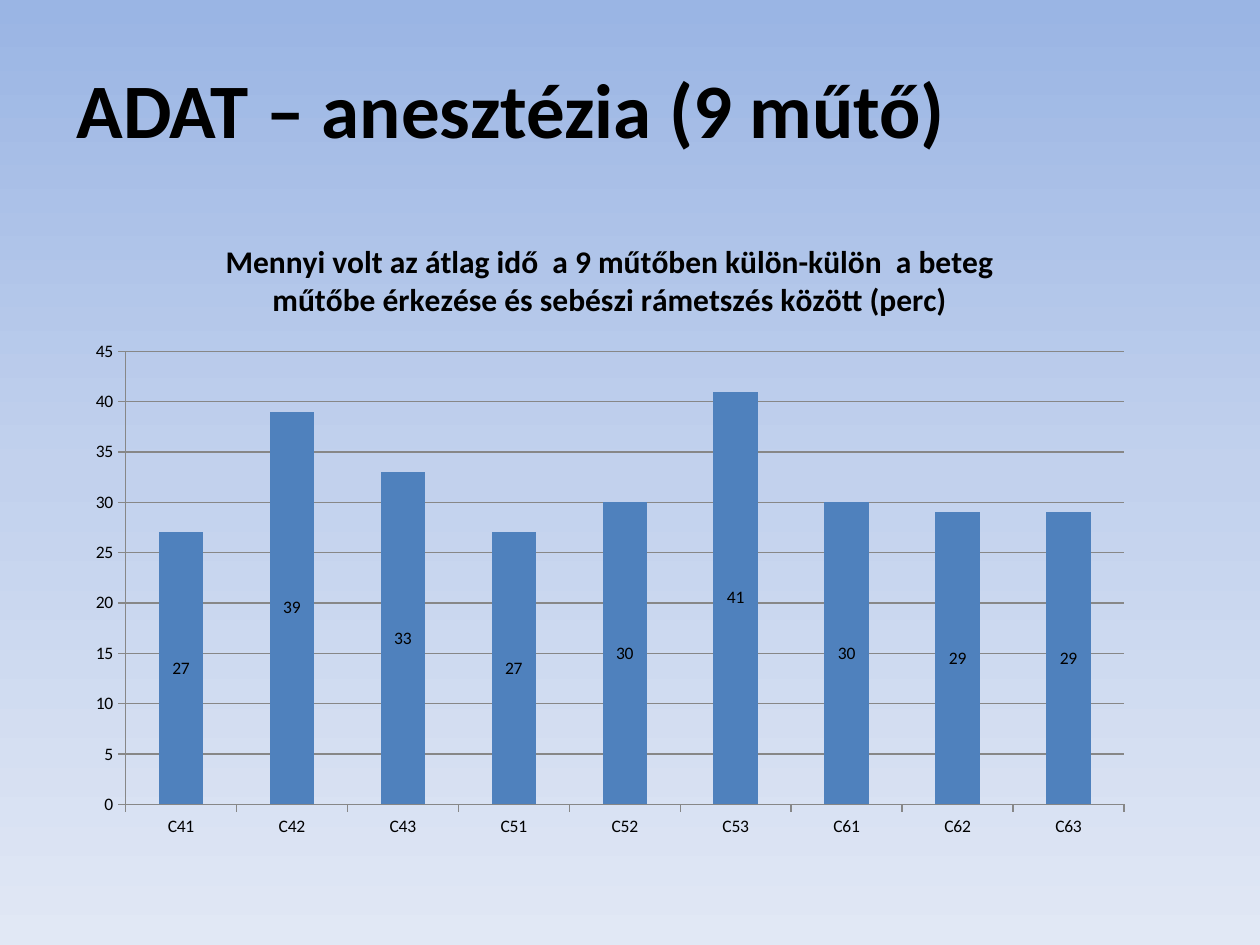
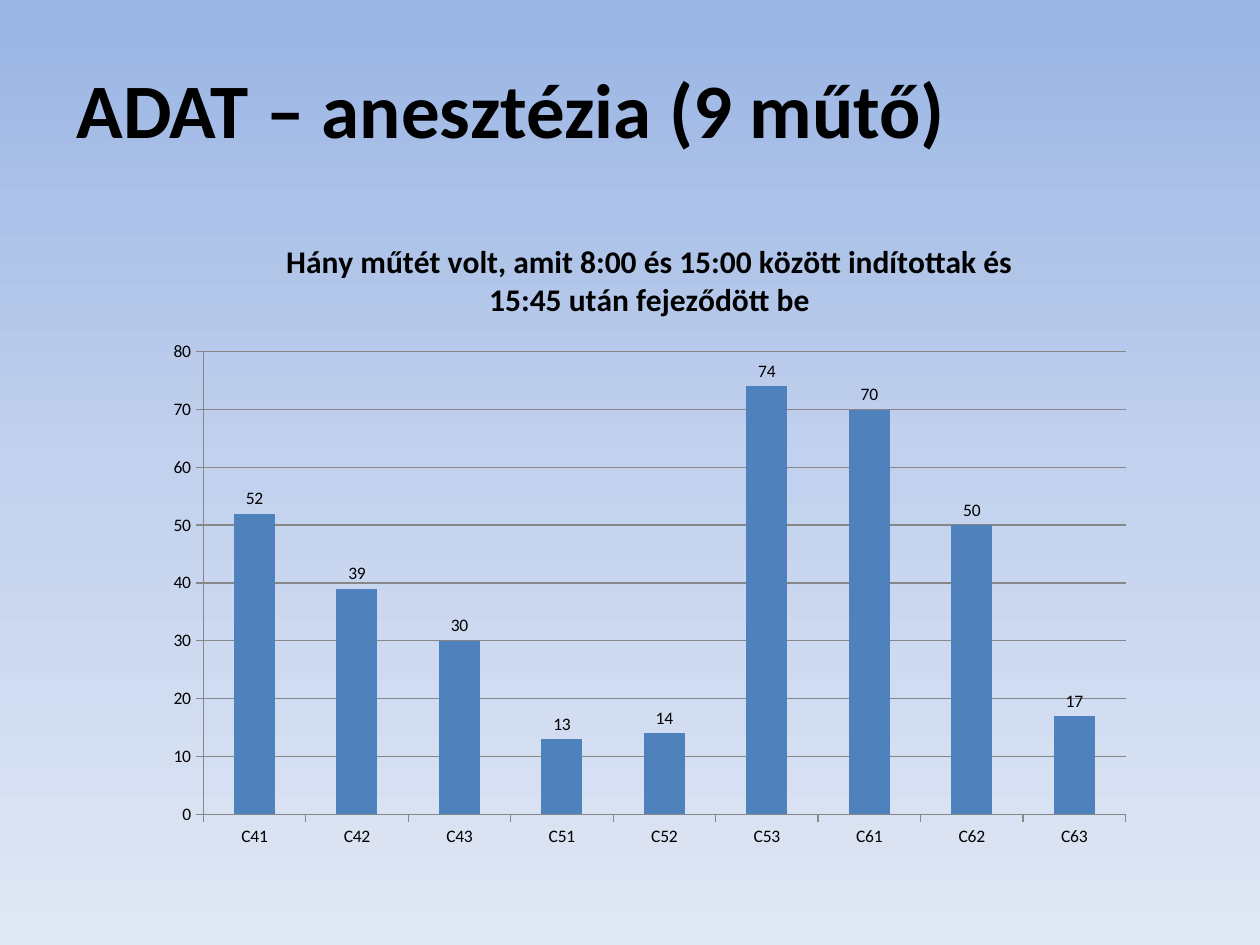
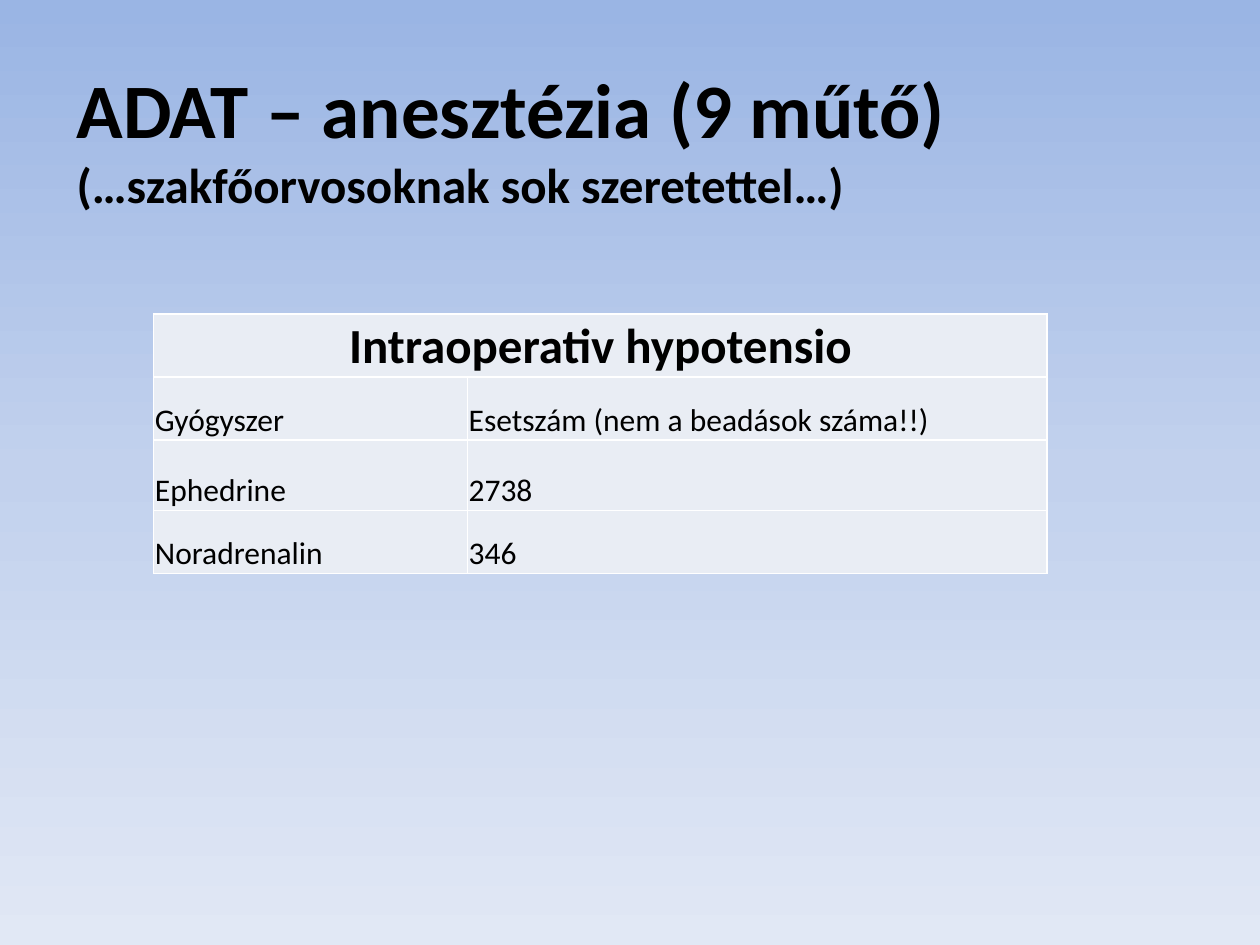
from copy import deepcopy

from lxml.etree import SubElement
from pptx import Presentation
from pptx.chart.data import CategoryChartData
from pptx.dml.color import RGBColor
from pptx.enum.chart import XL_CHART_TYPE, XL_LABEL_POSITION, XL_TICK_MARK
from pptx.enum.text import MSO_ANCHOR, MSO_AUTO_SIZE, PP_ALIGN
from pptx.oxml.ns import qn
from pptx.util import Inches, Pt

FONT = "Calibri"
BLACK, WHITE, GRID, BAR, CELL = "000000", "FFFFFF", "878787", "4F81BD", "E9EDF4"
BACKGROUND = ["9AB5E4", "C2D1ED", "E1E8F5"]
TITLE = "ADAT – anesztézia (9 műtő)"
ROOMS = ["C41", "C42", "C43", "C51", "C52", "C53", "C61", "C62", "C63"]


def rgb(value):
    """Return the colour for a hex string."""
    return RGBColor.from_string(value)


def style(obj, **values):
    """Set each given attribute on an object."""
    for name, value in values.items():
        setattr(obj, name, value)


def box(*lengths):
    """Convert left, top, width and height to Inches."""
    return [Inches(v) for v in lengths]


class Deck:
    """Presentation with its shared style and the current slide."""

    def __init__(self):
        """Start an empty 4:3 presentation."""
        self.prs = Presentation()
        style(self.prs, slide_width=Inches(10), slide_height=Inches(7.5))

    def font(self, font, size, bold=False):
        """Apply the deck font."""
        style(font, name=FONT, size=Pt(size), bold=bold)
        font.color.rgb = rgb(BLACK)

    def slide(self, height, subtitle=None):
        """Add a slide with the gradient background and its title."""
        self.s = self.prs.slides.add_slide(self.prs.slide_layouts[6])
        fill = self.s.background.fill
        fill.gradient()
        fill.gradient_angle = 270
        stops = self.s.element.find(".//" + qn("a:gsLst"))
        stops.insert(1, deepcopy(stops[0]))
        for i, (stop, color) in enumerate(zip(fill.gradient_stops, BACKGROUND)):
            stop.color.rgb = rgb(color)
            stop.position = i / 2
        self.title(height, subtitle)

    def title(self, height, subtitle):
        """Add the title and an optional smaller second line."""
        tf = self.s.shapes.add_textbox(*box(0.51, 0.44, 7.56, height)).text_frame
        style(tf, word_wrap=True, auto_size=MSO_AUTO_SIZE.SHAPE_TO_FIT_TEXT)
        lines = [(TITLE, 44)] + ([(subtitle, 28)] if subtitle else [])
        for i, (text, size) in enumerate(lines):
            p = tf.add_paragraph() if i else tf.paragraphs[0]
            r = p.add_run()
            r.text = text
            self.font(r.font, size, True)

    def chart(self, at, kind, title, values, position, overlap):
        """Add a column chart of the operating rooms."""
        data = CategoryChartData()
        data.categories = ROOMS
        data.add_series("Series 1", values)
        chart = self.s.shapes.add_chart(kind, *box(*at), data).chart
        self.font(chart.font, 10)
        style(chart, has_legend=False, has_title=True)
        chart.chart_title.include_in_layout = False
        r = chart.chart_title.text_frame.paragraphs[0].add_run()
        r.text = title
        self.font(r.font, 18, True)
        value_axis, category_axis = chart.value_axis, chart.category_axis
        value_axis.has_major_gridlines = True
        for axis in (value_axis, category_axis):
            style(axis, major_tick_mark=XL_TICK_MARK.OUTSIDE,
                  minor_tick_mark=XL_TICK_MARK.NONE)
        for part in (value_axis, category_axis, value_axis.major_gridlines):
            part.format.line.color.rgb = rgb(GRID)
            part.format.line.width = Pt(0.75)
        plot = chart.plots[0]
        style(plot, gap_width=150, overlap=overlap, vary_by_categories=False,
              has_data_labels=True)
        style(plot.data_labels, show_value=True, position=position)
        self.font(plot.data_labels.font, 10)
        fill = plot.series[0].format.fill
        fill.solid()
        fill.fore_color.rgb = rgb(BAR)

    def table(self, at, widths, heights, header, rows):
        """Add a table whose header spans all columns."""
        grid = [[header] + [""] * (len(widths) - 1)] + rows
        table = self.s.shapes.add_table(len(grid), len(widths), *box(*at)).table
        style(table, first_row=False, horz_banding=False)
        for column, width in zip(table.columns, widths):
            column.width = Inches(width)
        for row, height in zip(table.rows, heights):
            row.height = Inches(height)
        table.cell(0, 0).merge(table.cell(0, len(widths) - 1))
        for i, texts in enumerate(grid):
            for j, text in enumerate(texts):
                self.cell(table.cell(i, j), text, i == 0)

    def cell(self, cell, text, header):
        """Fill, border and write one table cell."""
        style(cell, vertical_anchor=MSO_ANCHOR.BOTTOM, margin_left=Inches(0.01),
              margin_top=Inches(0.01), margin_right=Inches(0.01), margin_bottom=0)
        pr = cell._tc.get_or_add_tcPr()
        for side in ("a:lnL", "a:lnR", "a:lnT", "a:lnB"):
            ln = SubElement(pr, qn(side), w=str(Pt(1)))
            SubElement(SubElement(ln, qn("a:solidFill")), qn("a:srgbClr"), val=WHITE)
        cell.fill.solid()
        cell.fill.fore_color.rgb = rgb(CELL)
        if text:
            p = cell.text_frame.paragraphs[0]
            p.alignment = PP_ALIGN.CENTER if header else PP_ALIGN.LEFT
            r = p.add_run()
            r.text = text
            self.font(r.font, 28 if header else 18, header)


def main():
    """Build the three slides."""
    deck = Deck()
    deck.slide(0.84)
    deck.chart((0.59, 1.7, 8.5, 5.04), XL_CHART_TYPE.COLUMN_STACKED,
               "Mennyi volt az átlag idő  a 9 műtőben külön-külön  a beteg "
               "műtőbe érkezése és sebészi rámetszés között (perc)",
               [27, 39, 33, 27, 30, 41, 30, 29, 29], XL_LABEL_POSITION.CENTER, 100)
    deck.slide(0.84)
    deck.chart((1.22, 1.7, 7.87, 5.12), XL_CHART_TYPE.COLUMN_CLUSTERED,
               "Hány műtét volt, amit 8:00 és 15:00 között indítottak és "
               "15:45 után fejeződött be",
               [52, 39, 30, 13, 14, 74, 70, 50, 17], XL_LABEL_POSITION.OUTSIDE_END, 0)
    deck.slide(1.31, "(…szakfőorvosoknak sok szeretettel…)")
    deck.table((1.22, 2.49, 7.09, 2.05), [2.49, 4.6], [0.5, 0.5, 0.56, 0.5],
               "Intraoperativ hypotensio",
               [["Gyógyszer", "Esetszám (nem a beadások száma!!)"],
                ["Ephedrine", "2738"],
                ["Noradrenalin", "346"]])
    deck.prs.save("out.pptx")


if __name__ == "__main__":
    main()
